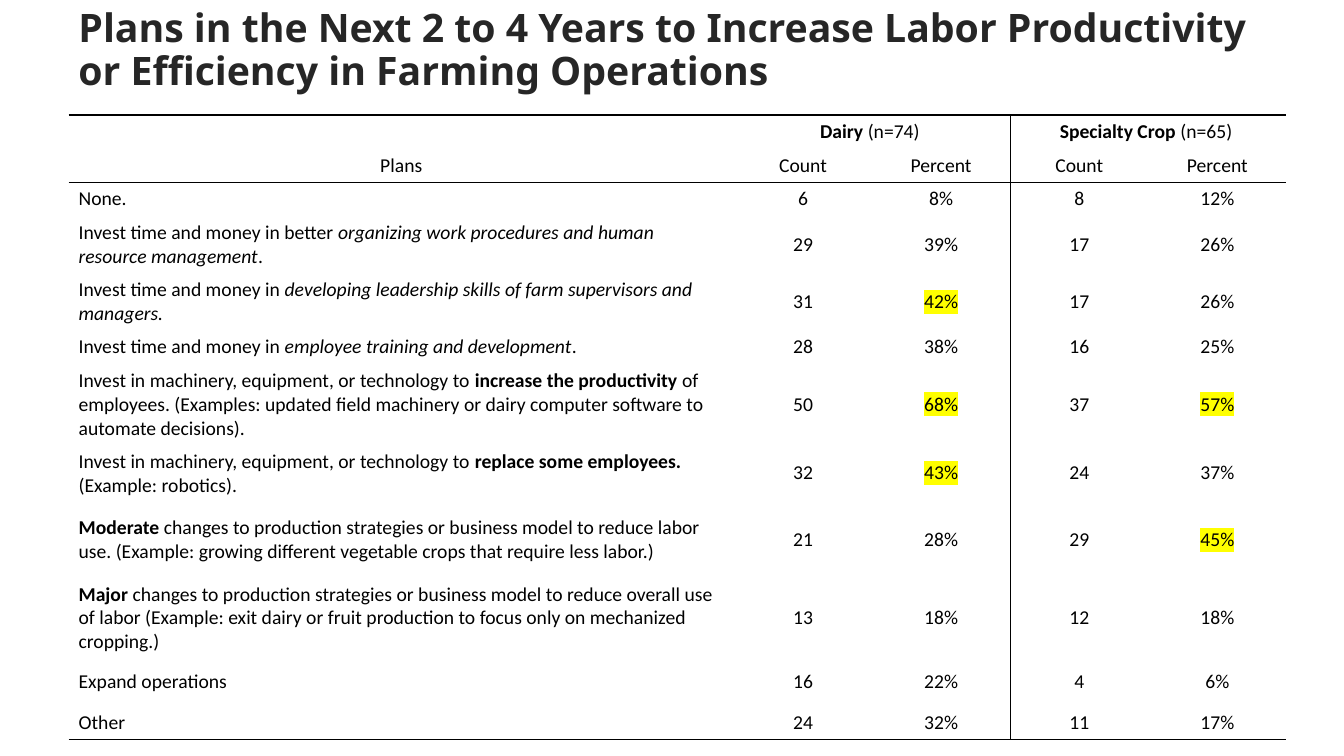
from pptx import Presentation, util as u
from pptx.dml.color import RGBColor
from pptx.enum import text
from pptx.oxml import parse_xml
from pptx.oxml.ns import nsdecls

TITLE = ("Plans in the Next 2 to 4 Years to Increase Labor Productivity "
         "or Efficiency in Farming Operations")
BODY = {"name": "Calibri", "size": u.Pt(14), "bold": False, "italic": False}
HEADING = {"name": "Noto Sans", "size": u.Pt(28), "bold": True}
BOLD, ITALIC = {"bold": True}, {"italic": True}
BLACK, YELLOW = "000000", "FFFF00"
COLUMN_WIDTHS = [6.6] + [1.37] * 4
GROUP_HEADS = ["", [("Dairy ", BOLD), ("(n=74) ", {})], "",
               [("Specialty Crop ", BOLD), ("(n=65) ", {})], ""]
COLUMN_HEADS = ["Plans", "Count", "Percent", "Count", "Percent"]
HIGHLIGHTED = {(4, 2), (6, 2), (6, 4), (7, 2), (8, 4)}
INVEST = ("Invest time and money in ", {})
MACHINERY = ("Invest in machinery, equipment, or technology to ", {})
PLANS = [
    (0.31, "None.", "6", "8%", "8", "12%"),
    (0.53, [("Invest time and money in better ", {}),
            ("organizing work procedures and human resource management", ITALIC),
            (".", {})], "29", "39%", "17", "26%"),
    (0.53, [INVEST, ("developing leadership skills of farm supervisors and managers.", ITALIC)],
     "31", "42%", "17", "26%"),
    (0.32, [INVEST, ("employee training and development", ITALIC), (".", {})],
     "28", "38%", "16", "25%"),
    (0.75, [MACHINERY, ("increase the productivity", BOLD),
            (" of employees. (Examples: updated field machinery or dairy computer "
             "software to automate decisions).", {})], "50", "68%", "37", "57%"),
    (0.53, [MACHINERY, ("replace some employees.", BOLD), (" (Example: robotics).", {})],
     "32", "43%", "24", "37%"),
    (0.75, [("Moderate", BOLD),
            (" changes to production strategies or business model to reduce labor use. "
             "(Example: growing different vegetable crops that require less labor.)", {})],
     "21", "28%", "29", "45%"),
    (0.75, [("Major", BOLD),
            (" changes to production strategies or business model to reduce overall use of "
             "labor (Example: exit dairy or fruit production to focus only on mechanized "
             "cropping.)", {})], "13", "18%", "12", "18%"),
    (0.47, "Expand operations", "16", "22%", "4", "6%"),
    (0.31, "Other", "24", "32%", "11", "17%"),
]


def color(value):
    """Turn a hex string into a colour."""
    return RGBColor.from_string(value)


def add_span(para, words, formats, fill):
    """Add one formatted run to a paragraph."""
    span = para.add_run()
    span.text = words
    for name, value in formats.items():
        setattr(span.font, name, value)
    span.font.color.rgb = color(fill)
    return span


def highlight(span, value):
    """Mark a run with a background colour."""
    mark = parse_xml(f'<a:highlight {nsdecls("a")}><a:srgbClr val="{value}"/></a:highlight>')
    span.font.fill._xPr.find("{*}solidFill").addnext(mark)


def set_borders(cell, widths):
    """Draw the given sides of a cell and clear the others."""
    properties = cell._tc.get_or_add_tcPr()
    for index, side in enumerate("LRTB"):
        points = widths.get(side, 0)
        paint = f'<a:solidFill><a:srgbClr val="{BLACK}"/></a:solidFill>' if points else "<a:noFill/>"
        properties.insert(index, parse_xml(
            f'<a:ln{side} {nsdecls("a")} w="{u.Pt(points)}">{paint}</a:ln{side}>'))


def cell_borders(row, column, last):
    """Give the border widths of a table position."""
    rules = {"T": {0: 1, 2: 0.5}.get(row), "B": {1: 0.5, last: 1}.get(row),
             "L": 0.5 if column == 3 else None,
             "R": 0.5 if column == 2 or (row, column) == (0, 1) else None}
    return {side: points for side, points in rules.items() if points}


def add_title(page, left, top, width, height):
    """Place the slide heading."""
    box = page.shapes.add_textbox(*map(u.Inches, (left, top, width, height)))
    frame = box.text_frame
    frame.word_wrap = True
    frame.vertical_anchor = text.MSO_ANCHOR.TOP
    para = frame.paragraphs[0]
    para.line_spacing = 0.9
    add_span(para, TITLE, HEADING, "262626")


def add_plans_table(page, left, top, width, height):
    """Place the table of plans by farm type."""
    rows = [(0.31, *GROUP_HEADS), (0.31, *COLUMN_HEADS), *PLANS]
    frame = page.shapes.add_table(len(rows), len(COLUMN_WIDTHS),
                                  *map(u.Inches, (left, top, width, height)))
    table = frame.table
    table.first_row = table.horz_banding = False
    for column, size in zip(table.columns, COLUMN_WIDTHS):
        column.width = u.Inches(size)
    for r, (size, *contents) in enumerate(rows):
        table.rows[r].height = u.Inches(size)
        for c, content in enumerate(contents):
            cell = table.cell(r, c)
            cell.fill.background()
            cell.vertical_anchor = (text.MSO_ANCHOR.BOTTOM if (r, c) == (1, 0)
                                    else text.MSO_ANCHOR.MIDDLE)
            set_borders(cell, cell_borders(r, c, len(rows) - 1))
            para = cell.text_frame.paragraphs[0]
            para.font.size = BODY["size"]
            if c or r < 2:
                para.alignment = text.PP_ALIGN.CENTER
            pieces = [(content, {})] if isinstance(content, str) else content
            for words, formats in pieces:
                if words:
                    span = add_span(para, words, BODY | formats, BLACK)
                    if (r, c) in HIGHLIGHTED:
                        highlight(span, YELLOW)
    for c in (1, 3):
        table.cell(0, c).merge(table.cell(0, c + 1))


def main():
    """Build and save the deck."""
    deck = Presentation()
    deck.slide_width, deck.slide_height = u.Inches(13.33), u.Inches(7.5)
    page = deck.slides.add_slide(deck.slide_layouts[6])
    add_title(page, 0.68, 0.04, 11.97, 1.25)
    add_plans_table(page, 0.68, 1.14, 12.1, 6.19)
    deck.save("out.pptx")


if __name__ == "__main__":
    main()
